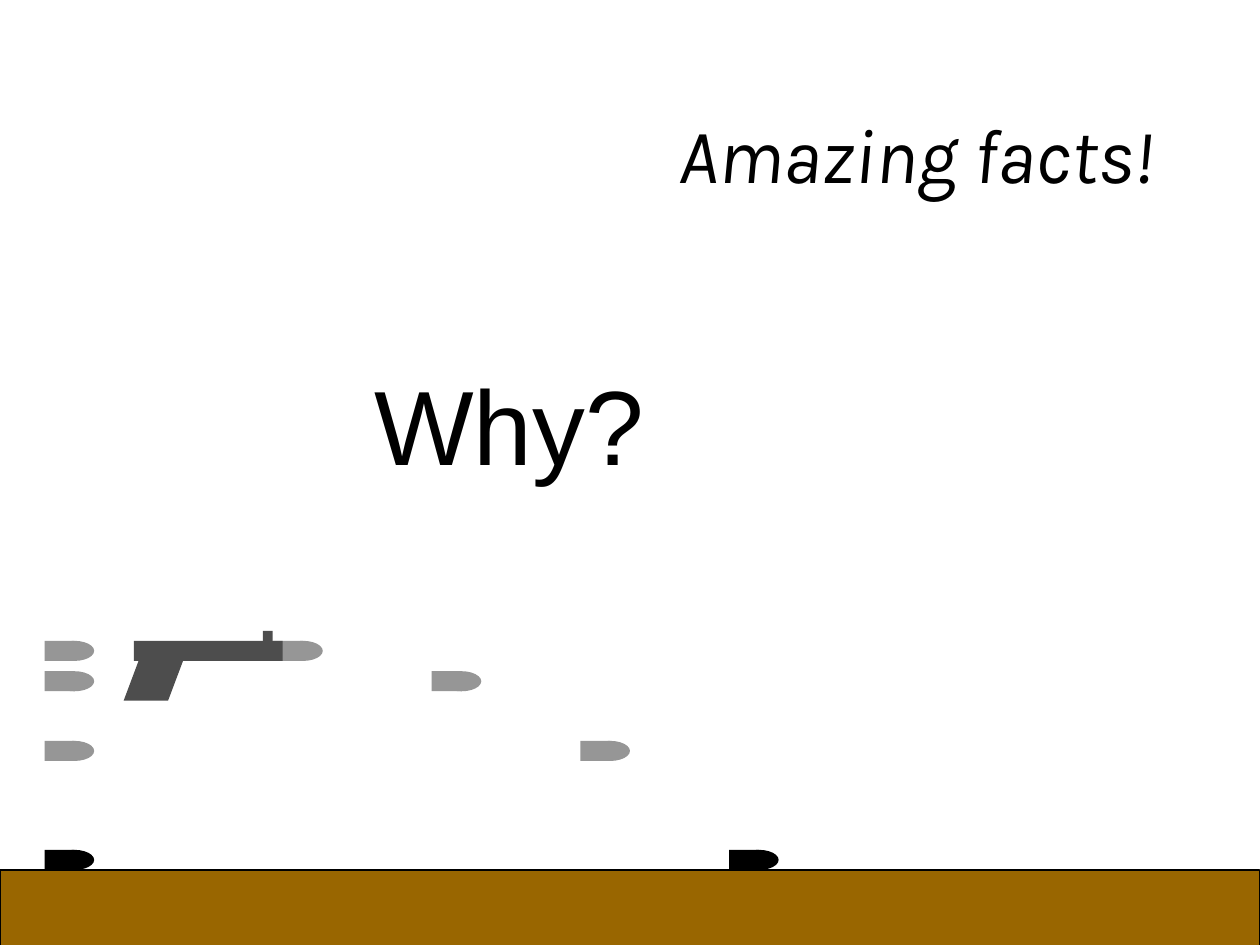
from dataclasses import dataclass

from lxml import etree
from pptx import Presentation
from pptx.dml.color import RGBColor
from pptx.enum.shapes import MSO_SHAPE
from pptx.enum.text import MSO_ANCHOR, PP_ALIGN
from pptx.oxml.ns import qn
from pptx.util import Cm, Pt

RECT = MSO_SHAPE.RECTANGLE
OVAL = MSO_SHAPE.OVAL
PARALLELOGRAM = MSO_SHAPE.PARALLELOGRAM
MIDDLE, TOP = MSO_ANCHOR.MIDDLE, MSO_ANCHOR.TOP
LEFT, RIGHT = PP_ALIGN.LEFT, PP_ALIGN.RIGHT


@dataclass(frozen=True)
class Theme:
    """Colours, fonts and type sizes of the slide."""
    black: RGBColor = RGBColor(0x00, 0x00, 0x00)
    bullet: RGBColor = RGBColor(0x96, 0x96, 0x96)
    gun: RGBColor = RGBColor(0x4D, 0x4D, 0x4D)
    ground: RGBColor = RGBColor(0x99, 0x66, 0x00)
    text_shadow: str = "969696"
    title_font: str = "Karla"
    body_font: str = "Arial"
    title_size: int = 49
    question_size: int = 67


THEME = Theme()
STOCK_X = 1.0
CALIBRE = 0.45
FLIGHT = [
    (6.12, 14.35, THEME.bullet),
    (9.67, 15.03, THEME.bullet),
    (13.0, 16.59, THEME.bullet),
    (16.33, 19.03, THEME.black),
]


def add_shape(shapes, kind, x, y, w, h, color):
    """Add a flat filled shape without an outline, measured in centimetres."""
    sp = shapes.add_shape(kind, Cm(x), Cm(y), Cm(w), Cm(h))
    sp.shadow.inherit = False
    sp.fill.solid()
    sp.fill.fore_color.rgb = color
    sp.line.fill.background()
    return sp


def add_bullet(slide, x, y, color):
    """Add a bullet as a group of a casing and a rounded tip."""
    shapes = slide.shapes.add_group_shape().shapes
    add_shape(shapes, RECT, x, y, 0.67, CALIBRE, color)
    add_shape(shapes, OVAL, x + 0.22, y, 0.89, CALIBRE, color)


def add_gun(slide, x, y):
    """Add a gun as a group of grip, barrel and sight."""
    shapes = slide.shapes.add_group_shape().shapes
    grip = add_shape(shapes, PARALLELOGRAM, x - 0.23, y + CALIBRE, 1.33, 0.89, THEME.gun)
    grip.adjustments[0] = 0.376
    add_shape(shapes, RECT, x, y, 3.33, CALIBRE, THEME.gun)
    add_shape(shapes, RECT, x + 2.89, y - 0.22, 0.22, 0.23, THEME.gun)


def add_ground(slide):
    """Add the outlined strip of ground across the slide."""
    sp = add_shape(slide.shapes, RECT, 0, 19.48, 28.22, 2.24, THEME.ground)
    sp.line.color.rgb = THEME.black
    sp.line.width = Pt(0.75)


def set_text(sp, text, size, align, anchor):
    """Put one line of text in a shape and return its paragraph and run."""
    tf = sp.text_frame
    tf.text = text
    tf.word_wrap = True
    tf.vertical_anchor = anchor
    tf.margin_left = tf.margin_right = Cm(0.28)
    tf.margin_top = tf.margin_bottom = Cm(0.15)
    p = tf.paragraphs[0]
    p.alignment = align
    r = p.runs[0]
    r.font.size = Pt(size)
    r.font.color.rgb = THEME.black
    return p, r


def add_text_shadow(r):
    """Give a run a hard shadow down to the right."""
    effects = etree.SubElement(r.font._element, qn("a:effectLst"))
    shadow = etree.SubElement(effects, qn("a:outerShdw"), dist="25400", dir="2700000")
    etree.SubElement(shadow, qn("a:srgbClr"), val=THEME.text_shadow)


def set_title(slide):
    """Place and format the title placeholder."""
    title = slide.shapes.title
    title.left, title.top, title.width, title.height = Cm(7.06), Cm(1.42), Cm(19.05), Cm(3.99)
    p, r = set_text(title, "Amazing facts!", THEME.title_size, RIGHT, MIDDLE)
    add_text_shadow(r)
    r.font.name = THEME.title_font
    r.font.italic = True


def add_question(slide):
    """Add the large question with half a line of space before it."""
    box = slide.shapes.add_textbox(Cm(8.1), Cm(7.92), Cm(12.22), Cm(3.1))
    p, r = set_text(box, "Why?", THEME.question_size, LEFT, TOP)
    r.font.name = THEME.body_font
    before = etree.SubElement(p._p.get_or_add_pPr(), qn("a:spcBef"))
    etree.SubElement(before, qn("a:spcPct"), val="50000")


def main():
    """Build the slide and save it."""
    prs = Presentation()
    prs.slide_width, prs.slide_height = Cm(28.22), Cm(21.16)
    slide = prs.slides.add_slide(prs.slide_layouts[5])
    set_title(slide)
    add_ground(slide)
    for x, y, color in FLIGHT:
        add_bullet(slide, x, y, color)
        add_bullet(slide, STOCK_X, y, color)
    add_gun(slide, 3.0, 14.35)
    add_question(slide)
    prs.save("out.pptx")


if __name__ == "__main__":
    main()
